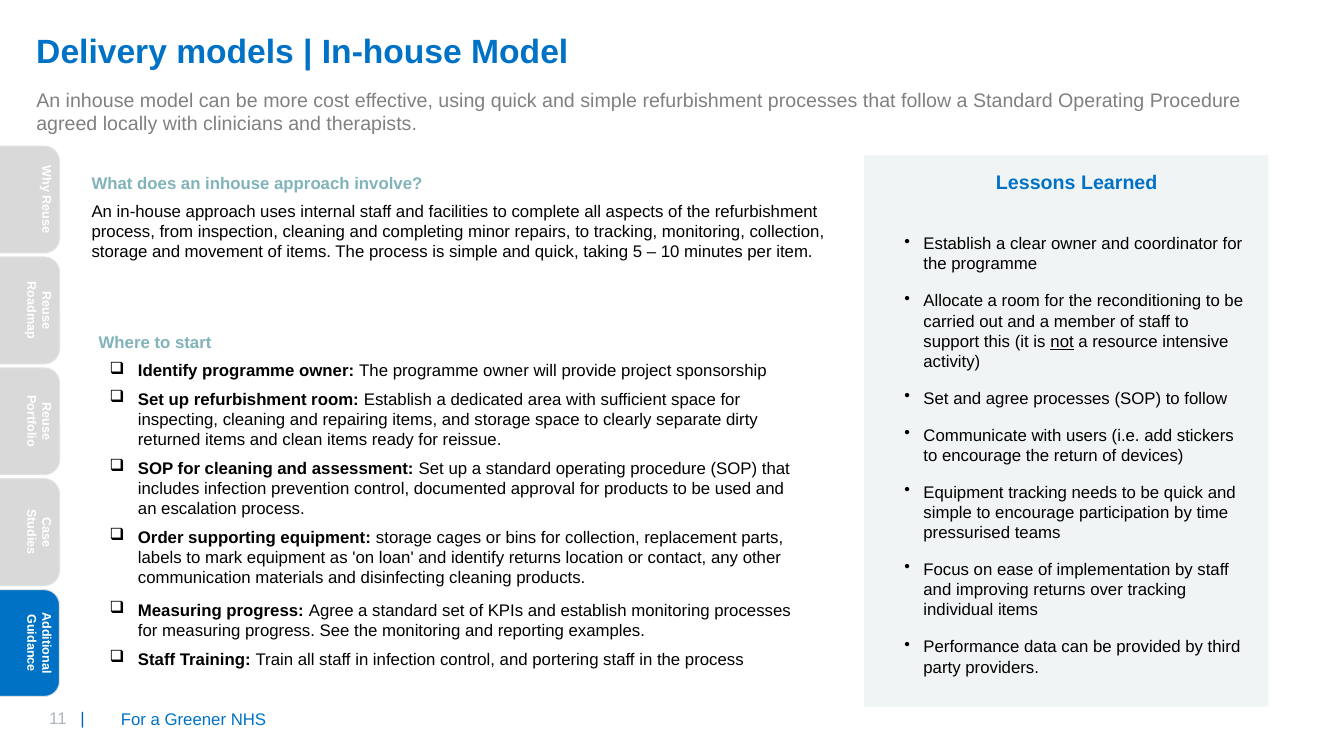
from lxml.etree import SubElement
from pptx import Presentation
from pptx.dml.color import RGBColor
from pptx.enum.shapes import MSO_SHAPE
from pptx.enum.text import MSO_ANCHOR, PP_ALIGN
from pptx.oxml.ns import qn
from pptx.util import Inches, Pt

BLUE = RGBColor(0x00, 0x72, 0xC6)
NAVY = RGBColor(0x00, 0x5E, 0xB8)
TEAL = RGBColor(0x81, 0xB3, 0xBA)
GREY = RGBColor(0x80, 0x80, 0x80)
PALE = RGBColor(0xAD, 0xB6, 0xBE)
MIST = RGBColor(0xF0, 0xF4, 0xF4)
SILVER = RGBColor(0xD9, 0xD9, 0xD9)
EDGE = RGBColor(0xE2, 0xE2, 0xE2)
WHITE = RGBColor(0xFF, 0xFF, 0xFF)
BLACK = RGBColor(0x00, 0x00, 0x00)

TITLE = {"size": Pt(24), "bold": True, "color": BLUE}
LEAD = {"size": Pt(14), "color": GREY}
HEAD = {"size": Pt(12), "bold": True, "color": TEAL}
PANEL = {"size": Pt(14), "bold": True, "color": BLUE}
BODY = {"size": Pt(12), "bold": False, "color": BLACK}
STRONG = {**BODY, "bold": True}
UNDER = {**BODY, "underline": True}
FOOT = {"size": Pt(12), "color": BLUE}
TAB = {"size": Pt(9), "bold": True, "color": WHITE}

STEPS = [
    ("Identify programme owner: ",
     "The programme owner will provide project sponsorship"),
    ("Set up refurbishment room: ",
     "Establish a dedicated area with sufficient space for inspecting, cleaning and "
     "repairing items, and storage space to clearly separate dirty returned items "
     "and clean items ready for reissue."),
    ("SOP for cleaning and assessment: ",
     "Set up a standard operating procedure (SOP) that includes infection prevention "
     "control, documented approval for products to be used and an escalation process."),
    ("Order supporting equipment: ",
     "storage cages or bins for collection, replacement parts, labels to mark "
     "equipment as 'on loan' and identify returns location or contact, any other "
     "communication materials and disinfecting cleaning products."),
    ("Measuring progress: ",
     "Agree a standard set of KPIs and establish monitoring processes for measuring "
     "progress. See the monitoring and reporting examples."),
    ("Staff Training: ",
     "Train all staff in infection control, and portering staff in the process"),
]
LESSONS = [
    [("Establish a clear owner and coordinator for the programme", BODY)],
    [("Allocate a room for the reconditioning to be carried out and a member of "
      "staff to support this (it is ", BODY), ("not", UNDER),
     (" a resource intensive activity)", BODY)],
    [("Set and agree processes (SOP) to follow", BODY)],
    [("Communicate with users (i.e. add stickers to encourage the return of devices)",
      BODY)],
    [("Equipment tracking needs to be quick and simple to encourage participation "
      "by time pressurised teams", BODY)],
    [("Focus on ease of implementation by staff and improving returns over tracking "
      "individual items", BODY)],
    [("Performance data can be provided by third party providers.", BODY)],
]
TABS = ["Why Reuse", "Reuse\vRoadmap", "Reuse\vPortfolio", "Case\vStudies",
        "Additional\vGuidance"]


def style(run, form):
    run.font.name = "Arial"
    for key, value in form.items():
        if key == "color":
            run.font.color.rgb = value
        else:
            setattr(run.font, key, value)


def write(para, parts, **form):
    for key, value in form.items():
        setattr(para, key, value)
    for text, look in parts:
        run = para.add_run()
        run.text = text
        style(run, look)


def bullet(para, mark, indent):
    props = para._p.get_or_add_pPr()
    props.set("marL", str(indent[0]))
    props.set("indent", str(-indent[1]))
    SubElement(props, qn("a:buChar"), char=mark)


def text_box(slide, box, **form):
    frame = slide.shapes.add_textbox(*map(Inches, box)).text_frame
    frame.word_wrap = True
    for key, value in form.items():
        setattr(frame, key, value)
    return frame


def block(slide, shape, box, color):
    item = slide.shapes.add_shape(shape, *map(Inches, box))
    item.shadow.inherit = False
    item.fill.solid()
    item.fill.fore_color.rgb = color
    item.line.fill.background()
    return item


def header(slide, left, top):
    flush = {"margin_left": 0, "margin_right": 0}
    title = text_box(slide, (left, top, 10.9, 0.55), **flush)
    write(title.paragraphs[0], [("Delivery models | In-house Model", TITLE)])
    lead = text_box(slide, (left, top + 0.57, 12.21, 0.56), **flush)
    write(lead.paragraphs[0], [(
        "An inhouse model can be more cost effective, using quick and simple "
        "refurbishment processes that follow a Standard Operating Procedure agreed "
        "locally with clinicians and therapists.", LEAD)])


def intro(slide, box):
    frame = text_box(slide, box)
    write(frame.paragraphs[0], [("What does an inhouse approach involve?", HEAD)],
          space_after=Pt(6))
    write(frame.add_paragraph(), [(
        "An in-house approach uses internal staff and facilities to complete all "
        "aspects of the refurbishment process, from inspection, cleaning and "
        "completing minor repairs, to tracking, monitoring, collection, storage and "
        "movement of items. The process is simple and quick, taking 5 – 10 minutes "
        "per item.", BODY)], space_after=Pt(6))


def steps(slide, box):
    frame = text_box(slide, box)
    write(frame.paragraphs[0], [("Where to start", HEAD)], space_after=Pt(6))
    for name, text in STEPS:
        para = frame.add_paragraph()
        gap = Pt(3) if name.startswith("Measuring") else Pt(0)
        write(para, [(name, STRONG), (text, BODY)], space_before=gap, space_after=Pt(6))
        bullet(para, "❑", (Inches(0.39), Inches(0.28)))


def lessons(slide, box):
    left, top, width, height = box
    block(slide, MSO_SHAPE.RECTANGLE, box, MIST)
    frame = text_box(slide, (left + 0.3, top + 0.1, width - 0.39, height - 0.29))
    write(frame.paragraphs[0], [("Lessons Learned", PANEL)],
          alignment=PP_ALIGN.CENTER, space_after=Pt(28))
    for parts in LESSONS:
        para = frame.add_paragraph()
        write(para, parts, space_after=Pt(12))
        bullet(para, "•", (Inches(0.19), Inches(0.19)))


def side_tabs(slide, left, top, pitch):
    for i, name in enumerate(TABS):
        fill = BLUE if name == TABS[-1] else SILVER
        tab = block(slide, MSO_SHAPE.ROUNDED_RECTANGLE,
                    (left, top + i * pitch, 0.79, 1.06), fill)
        tab.adjustments[0] = 0.19
        tab.line.color.rgb = EDGE
        tab.line.width = Pt(0.75)
        frame = tab.text_frame
        frame.text = name
        frame.vertical_anchor = MSO_ANCHOR.TOP
        frame.margin_left = frame.margin_right = 0
        frame.margin_top = frame.margin_bottom = Inches(0.1)
        frame._txBody.bodyPr.set("vert", "vert")
        para = frame.paragraphs[0]
        para.alignment = PP_ALIGN.CENTER
        for run in para.runs:
            style(run, TAB)


def footer(slide, left, top):
    page = text_box(slide, (left, top + 0.04, 0.87, 0.3)).paragraphs[0]
    stops = SubElement(page._p.get_or_add_pPr(), qn("a:tabLst"))
    SubElement(stops, qn("a:tab"), pos=str(Inches(0.31)), algn="l")
    write(page, [("11\t", {**FOOT, "color": PALE}), ("|", {**FOOT, "color": NAVY})])
    note = text_box(slide, (left + 0.71, top, 7.7, 0.4),
                    vertical_anchor=MSO_ANCHOR.MIDDLE)
    write(note.paragraphs[0], [("For a Greener NHS", FOOT)])


def main():
    deck = Presentation()
    deck.slide_width, deck.slide_height = Inches(13.33), Inches(7.5)
    slide = deck.slides.add_slide(deck.slide_layouts[6])
    footer(slide, 0.39, 6.93)
    header(slide, 0.36, 0.25)
    intro(slide, (0.81, 1.66, 7.5, 0.99))
    steps(slide, (0.88, 3.24, 7.17, 3.47))
    side_tabs(slide, -0.2, 1.45, 1.1)
    lessons(slide, (8.57, 1.54, 4.01, 5.47))
    deck.save("out.pptx")


if __name__ == "__main__":
    main()
